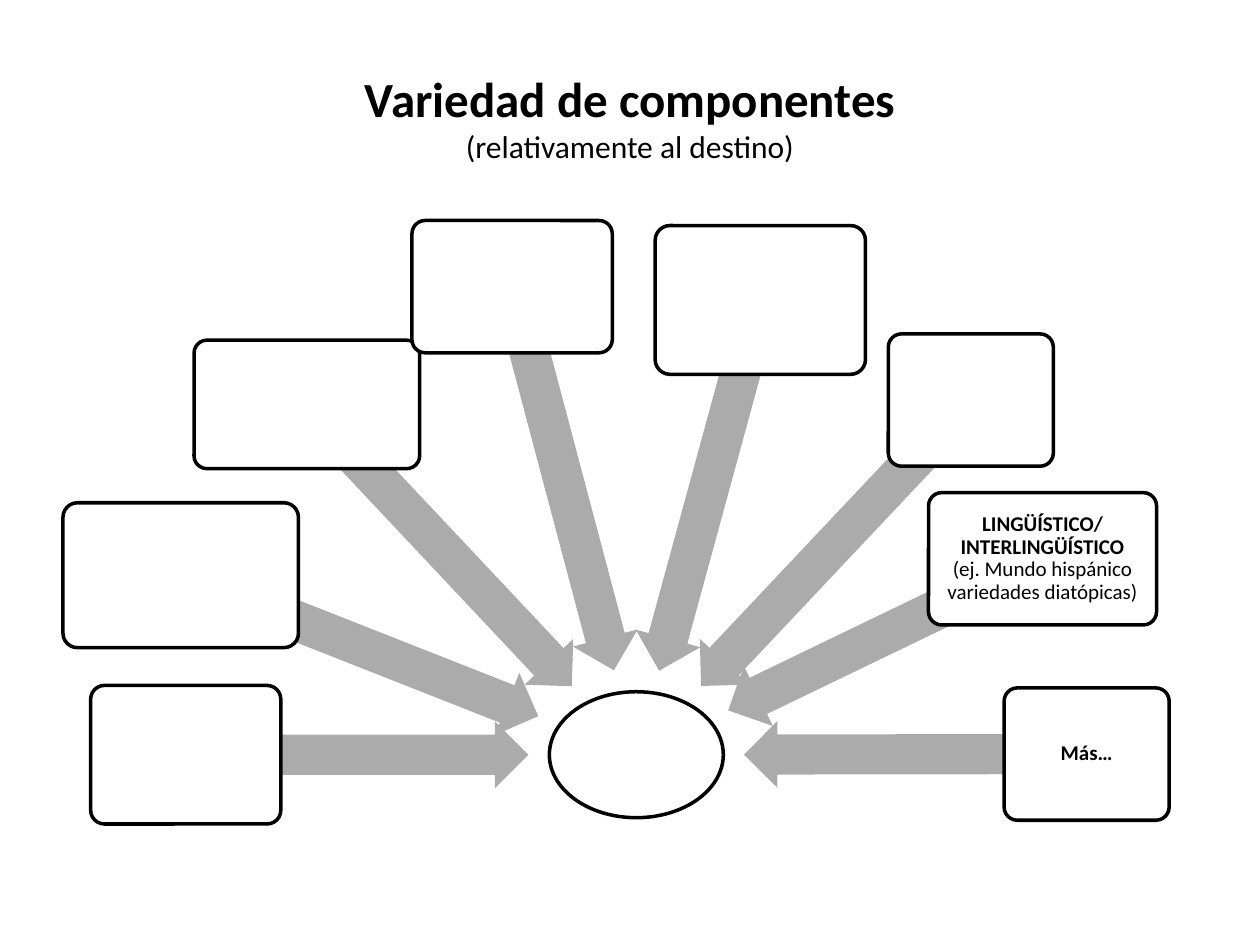
from copy import deepcopy
from math import atan2, degrees

from pptx import Presentation
from pptx.dml.color import RGBColor
from pptx.enum.shapes import MSO_SHAPE
from pptx.enum.text import MSO_ANCHOR, PP_ALIGN
from pptx.util import Pt

ELLIPSE = MSO_SHAPE.OVAL
ROUNDED = MSO_SHAPE.ROUNDED_RECTANGLE
ARROW = MSO_SHAPE.LEFT_ARROW
MIDDLE = MSO_ANCHOR.MIDDLE
CENTER = PP_ALIGN.CENTER

HUB = (363.6, 431.3)
HUB_SIZE = (99.4, 72)
ARROW_HEIGHT = 38.2

TITLE = [("Variedad de componentes", 28, True), ("(relativamente al destino)", 18, False)]
LINGUISTIC = [
    ("LINGÜÍSTICO/", 12, True),
    ("INTERLINGÜÍSTICO", 12, True),
    ("(ej. Mundo hispánico variedades diatópicas)", 12, False),
]
MORE = [("Más…", 12, True)]

COMPONENTS = [
    (51.8, 391.7, 108.7, 79.2, 195.8, []),
    (36, 287.3, 134.6, 82.8, 219.6, []),
    (110.9, 194.4, 128.9, 73.4, 221, []),
    (235.4, 126, 114.5, 75.6, 226.8, []),
    (374.4, 128.9, 120.2, 85, 219.6, []),
    (507.6, 190.8, 94.3, 75.6, 224.6, []),
    (530.6, 281.5, 130.3, 75.6, 199.4, LINGUISTIC),
    (573.8, 393.1, 94.3, 75.6, 195.8, MORE),
]


def color(value):
    return RGBColor.from_string(value)


def apply(target, values):
    for name, value in values.items():
        setattr(target, name, value)


class SlideBuilder:
    font = "Calibri"
    ink = "000000"
    paper = "FFFFFF"
    arrow_fill = "ABABAB"
    outline = 2

    def __init__(self, slide):
        self.slide = slide

    def fill_text(self, text_frame, lines, spacing=1.0):
        apply(text_frame, {"word_wrap": True, "vertical_anchor": MIDDLE})
        paragraph = text_frame.paragraphs[0]
        apply(paragraph, {"alignment": CENTER, "line_spacing": spacing})
        for index, (text, size, bold) in enumerate(lines):
            if index:
                paragraph.add_line_break()
                paragraph._p[-1].append(deepcopy(run._r.get_or_add_rPr()))
            run = paragraph.add_run()
            run.text = text
            apply(run.font, {"name": self.font, "size": Pt(size), "bold": bold})
            run.font.color.rgb = color(self.ink)

    def title(self, left, top, width, height, lines):
        shape = self.slide.shapes.title
        apply(shape, {"left": Pt(left), "top": Pt(top), "width": Pt(width), "height": Pt(height)})
        self.fill_text(shape.text_frame, lines)

    def shape(self, kind, left, top, width, height, fill, adjustments=()):
        shape = self.slide.shapes.add_shape(kind, Pt(left), Pt(top), Pt(width), Pt(height))
        shape.shadow.inherit = False
        shape.fill.solid()
        shape.fill.fore_color.rgb = color(fill)
        for index, value in enumerate(adjustments):
            shape.adjustments[index] = value
        return shape

    def outlined(self, kind, left, top, width, height, adjustments=()):
        shape = self.shape(kind, left, top, width, height, self.paper, adjustments)
        shape.line.color.rgb = color(self.ink)
        shape.line.width = Pt(self.outline)
        return shape

    def hub(self, center, size):
        (x, y), (width, height) = center, size
        self.outlined(ELLIPSE, x - width / 2, y - height / 2, width, height)

    def arrow(self, start, target, length):
        (x, y), (target_x, target_y) = start, target
        angle = atan2(target_y - y, target_x - x)
        reach = length / 2 / ((target_x - x) ** 2 + (target_y - y) ** 2) ** 0.5
        middle_x = x + (target_x - x) * reach
        middle_y = y + (target_y - y) * reach
        shape = self.shape(ARROW, middle_x - length / 2, middle_y - ARROW_HEIGHT / 2,
                           length, ARROW_HEIGHT, self.arrow_fill, (0.6, 0.5))
        shape.line.fill.background()
        shape.rotation = degrees(angle) + 180

    def component(self, left, top, width, height, lines):
        shape = self.outlined(ROUNDED, left, top, width, height, (0.1,))
        if lines:
            sides = ("left", "top", "right", "bottom")
            apply(shape.text_frame, {f"margin_{side}": Pt(2.2) for side in sides})
            self.fill_text(shape.text_frame, lines, 0.9)


def main():
    presentation = Presentation()
    apply(presentation, {"slide_width": Pt(720), "slide_height": Pt(540)})
    builder = SlideBuilder(presentation.slides.add_slide(presentation.slide_layouts[5]))
    builder.title(36, 21.6, 648, 90, TITLE)
    builder.hub(HUB, HUB_SIZE)
    for left, top, width, height, length, lines in COMPONENTS:
        builder.arrow((left + width / 2, top + height / 2), HUB, length)
        builder.component(left, top, width, height, lines)
    presentation.save("out.pptx")


if __name__ == "__main__":
    main()
